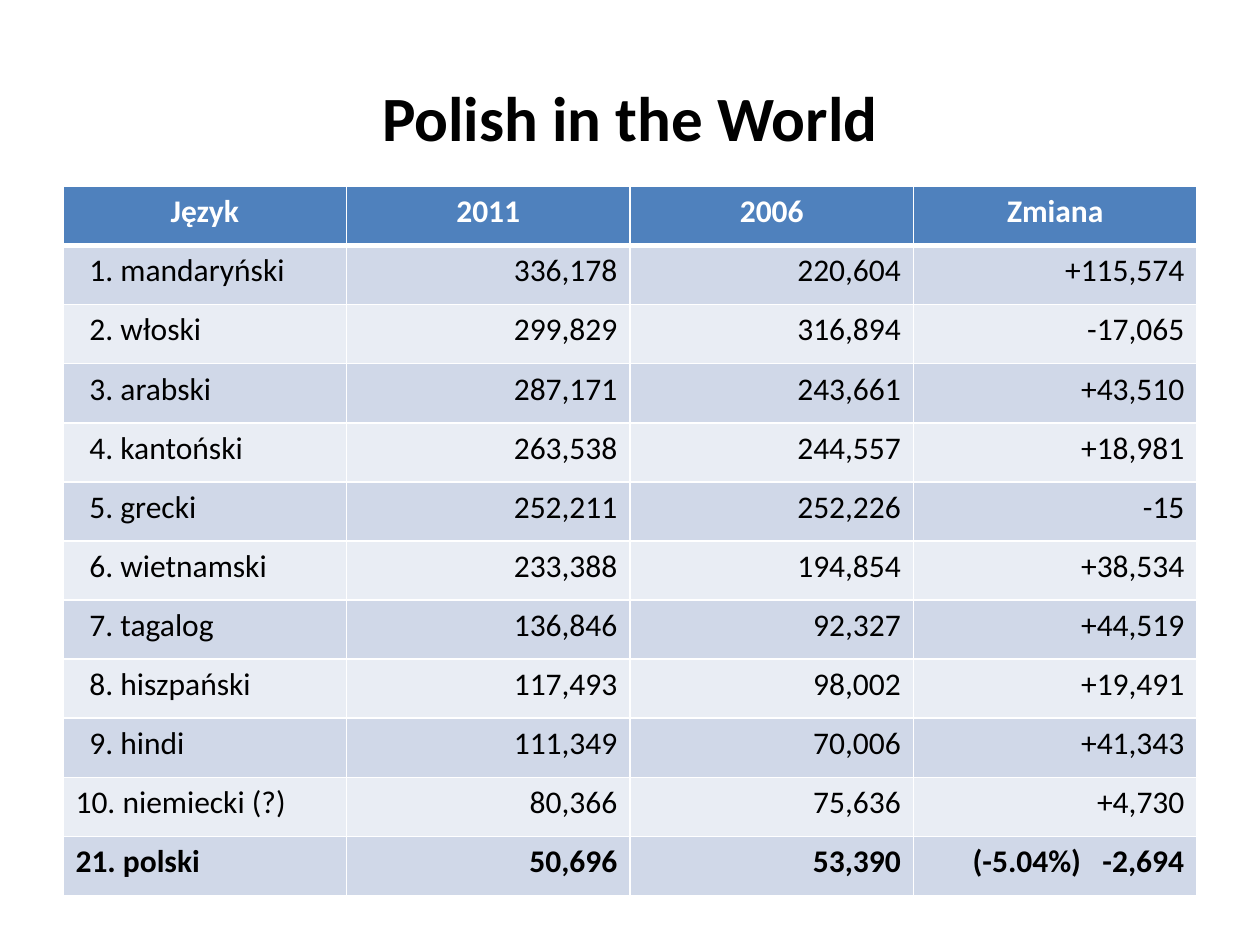
import pptx
import pptx.util
import pptx.dml.color
import pptx.enum.text
import pptx.oxml.ns
import lxml.etree

Inches = pptx.util.Inches
Pt = pptx.util.Pt
Align = pptx.enum.text.PP_ALIGN
qn = pptx.oxml.ns.qn
COLORS = {"text": "000000", "white": "FFFFFF", "header": "4F81BD", "odd": "D0D8E8", "even": "E9EDF4"}
ROWS = [
    ("Język", "2011", "2006", "Zmiana"),
    ("1. mandaryński", "336,178", "220,604", "+115,574"),
    ("2. włoski", "299,829", "316,894", "-17,065"),
    ("3. arabski", "287,171", "243,661", "+43,510"),
    ("4. kantoński", "263,538", "244,557", "+18,981"),
    ("5. grecki", "252,211", "252,226", "-15"),
    ("6. wietnamski", "233,388", "194,854", "+38,534"),
    ("7. tagalog", "136,846", "92,327", "+44,519"),
    ("8. hiszpański", "117,493", "98,002", "+19,491"),
    ("9. hindi", "111,349", "70,006", "+41,343"),
    ("10. niemiecki (?)", "80,366", "75,636", "+4,730"),
    ("21. polski", "50,696", "53,390", "(-5.04%)\t-2,694"),
]
LAST = len(ROWS) - 1


def style_paragraph(paragraph, size, color, bold, alignment):
    paragraph.alignment = alignment
    paragraph.font.name = "Calibri"
    paragraph.font.size = Pt(size)
    paragraph.font.bold = bold
    paragraph.font.color.rgb = pptx.dml.color.RGBColor.from_string(COLORS[color])


def add_border(cell, side, points):
    line = lxml.etree.SubElement(cell._tc.get_or_add_tcPr(), qn("a:ln" + side), w=str(Pt(points)))
    fill = lxml.etree.SubElement(line, qn("a:solidFill"))
    lxml.etree.SubElement(fill, qn("a:srgbClr"), val=COLORS["white"])


presentation = pptx.Presentation()
presentation.slide_width, presentation.slide_height = Inches(10), Inches(7.5)
slide = presentation.slides.add_slide(presentation.slide_layouts[5])
margin = Inches(0.5)
content_width = presentation.slide_width - 2 * margin

title = slide.shapes.title
title.left, title.top, title.width, title.height = margin, Inches(0.3), content_width, Inches(1.25)
title.text_frame.text = "Polish in the World"
title.text_frame.vertical_anchor = pptx.enum.text.MSO_ANCHOR.MIDDLE
style_paragraph(title.text_frame.paragraphs[0], 36, "text", True, Align.CENTER)

table = slide.shapes.add_table(
    len(ROWS), len(ROWS[0]), margin, Inches(1.48), content_width, Inches(5.63)
).table

for row, values in enumerate(ROWS):
    for column, value in enumerate(values):
        cell = table.cell(row, column)
        for side in "LRTB":
            heavy = (row, side) in ((0, "B"), (1, "T"))
            add_border(cell, side, 3 if heavy else 1)
        fill_name = "header" if row == 0 else "odd" if row % 2 else "even"
        cell.fill.solid()
        cell.fill.fore_color.rgb = pptx.dml.color.RGBColor.from_string(COLORS[fill_name])
        cell.text_frame.text = value
        paragraph = cell.text_frame.paragraphs[0]
        alignment = Align.CENTER if row == 0 else Align.RIGHT if column else Align.LEFT
        if column == 0 and 0 < row < 10:
            cell.margin_left = Inches(0.21)
        if "\t" in value:
            alignment = Align.LEFT
            cell.margin_left = Inches(0.47)
            tabs = lxml.etree.SubElement(paragraph._p.get_or_add_pPr(), qn("a:tabLst"))
            lxml.etree.SubElement(tabs, qn("a:tab"), pos=str(Inches(1.03)), algn="l")
        text_color = "white" if row == 0 else "text"
        style_paragraph(paragraph, 18, text_color, row in (0, LAST), alignment)

presentation.save("out.pptx")
